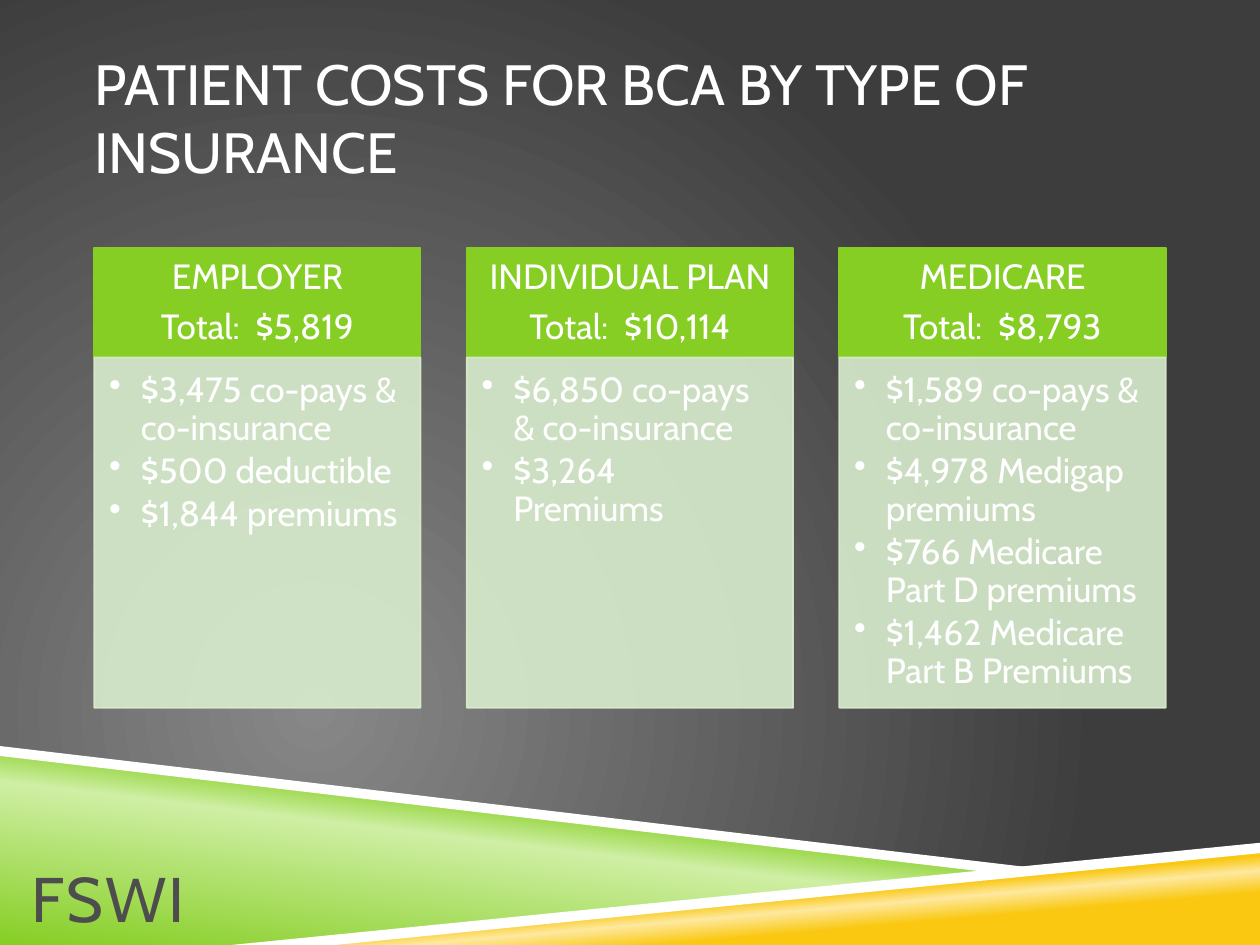
from dataclasses import dataclass

from lxml import etree
from pptx import Presentation
from pptx.dml.color import RGBColor
from pptx.enum.shapes import MSO_SHAPE
from pptx.enum.text import MSO_ANCHOR, MSO_AUTO_SIZE, PP_ALIGN
from pptx.oxml.ns import qn
from pptx.util import Cm, Pt


@dataclass(frozen=True)
class Theme:
    font: str = "Cabin"
    white: str = "FFFFFF"
    green: str = "86CE24"
    light_green: str = "CFEFA4"
    pale_green: str = "D9EDCD"
    amber: str = "FAC810"
    light_amber: str = "FDE99F"
    gray: str = "878787"
    dark: str = "3D3D3D"
    footer: str = "4D4D4D"
    title_size: float = 32.4
    text_size: float = 20
    footer_size: float = 36


T = Theme()


def set_gradient(fill, owner, stops, angle=None):
    """Fill with (percent, colour) stops: linear at an angle, else circular."""
    fill.gradient()
    grad = next(owner.iter(qn("a:gradFill")))
    for child in list(grad):
        grad.remove(child)
    gs_list = etree.SubElement(grad, qn("a:gsLst"))
    for pos, color in stops:
        gs = etree.SubElement(gs_list, qn("a:gs"), pos=str(pos * 1000))
        etree.SubElement(gs, qn("a:srgbClr"), val=color)
    if angle is not None:
        etree.SubElement(grad, qn("a:lin"), ang=str(angle * 60000), scaled="0")
    else:
        circle = etree.SubElement(grad, qn("a:path"), path="circle")
        etree.SubElement(circle, qn("a:fillToRect"),
                         l="50000", t="100000", r="100000", b="50000")


def add_run(p, text, size, color):
    r = p.add_run()
    r.text = text
    r.font.name = T.font
    r.font.size = Pt(size)
    r.font.color.rgb = RGBColor.from_string(color)
    return r


prs = Presentation()
prs.slide_width, prs.slide_height = Cm(25.4), Cm(19.05)
s = prs.slides.add_slide(prs.slide_layouts[5])
set_gradient(s.background.fill, s.element, [(0, T.gray), (100, T.dark)])

# Bands along the bottom: outline in cm, gradient stops, angle (None = plain white)
green_stops = [(0, T.green), (52, T.light_green), (66, T.green)]
amber_stops = [(28, T.amber), (40, T.light_amber), (48, T.amber)]
bands = [
    ([(0, 15.16), (20.12, 17.58), (5.08, 19.05), (0, 19.05)], green_stops, 277),
    ([(5.03, 19.05), (25.4, 17.07), (25.4, 19.05)], amber_stops, 265),
    ([(0, 15.04), (0, 15.24), (20.07, 17.6), (21.13, 17.53)], None, None),
    ([(25.4, 16.99), (4.67, 19.05), (6.76, 19.05), (25.4, 17.2)], None, None),
]
for outline, stops, angle in bands:
    points = [(Cm(x), Cm(y)) for x, y in outline]
    builder = s.shapes.build_freeform(*points[0])
    builder.add_line_segments(points[1:], close=True)
    sp = builder.convert_to_shape()
    sp.shadow.inherit = False
    sp.line.fill.background()
    if stops:
        set_gradient(sp.fill, sp.element, stops, angle)
    else:
        sp.fill.solid()
        sp.fill.fore_color.rgb = RGBColor.from_string(T.white)

# Title
title = s.shapes.title
title.left, title.top, title.width, title.height = Cm(1.9), Cm(0.76), Cm(21.59), Cm(3.18)
tf = title.text_frame
tf.word_wrap = True
tf.auto_size = MSO_AUTO_SIZE.NONE
tf.vertical_anchor = MSO_ANCHOR.MIDDLE
tf.margin_left = tf.margin_right = 0
tf.margin_top = tf.margin_bottom = Cm(0.13)
p = tf.paragraphs[0]
p.alignment = PP_ALIGN.LEFT
add_run(p, "PATIENT COSTS FOR BCA BY TYPE OF INSURANCE", T.title_size, T.white)

# One column per type of insurance: a heading block above a list block
plans = [
    (["EMPLOYER", "Total:  $5,819"],
     ["$3,475 co-pays & co-insurance", "$500 deductible", "$1,844 premiums"]),
    (["INDIVIDUAL PLAN", "Total:  $10,114"],
     ["$6,850 co-pays & co-insurance", "$3,264 Premiums"]),
    (["MEDICARE", "Total:  $8,793"],
     ["$1,589 co-pays & co-insurance", "$4,978 Medigap premiums",
      "$766 Medicare Part D premiums", "$1,462 Medicare Part B Premiums"]),
]
first_left, pitch, col_width = 1.9, 7.51, 6.58
head_top, head_height, list_height = 5, 2.21, 7.06

for i, (heading, costs) in enumerate(plans):
    left = Cm(first_left + i * pitch)
    blocks = [
        (heading, head_top, head_height, T.green, False),
        (costs, head_top + head_height, list_height, T.pale_green, True),
    ]
    for lines, top, height, color, is_list in blocks:
        sp = s.shapes.add_shape(MSO_SHAPE.RECTANGLE, left, Cm(top),
                                Cm(col_width), Cm(height))
        sp.shadow.inherit = False
        sp.fill.solid()
        sp.fill.fore_color.rgb = RGBColor.from_string(color)
        sp.line.color.rgb = RGBColor.from_string(color)
        sp.line.width = Pt(1)
        tf = sp.text_frame
        tf.word_wrap = True
        tf.margin_left = tf.margin_right = Cm(0.41)
        tf.margin_top = tf.margin_bottom = Cm(0.23)
        tf.vertical_anchor = MSO_ANCHOR.MIDDLE
        if is_list:
            tf.vertical_anchor = MSO_ANCHOR.TOP
            tf.margin_left = tf.margin_top = Cm(0.3)
            tf.margin_bottom = Cm(0.43)
            for clr in sp.element.spPr.iter(qn("a:srgbClr")):
                etree.SubElement(clr, qn("a:alpha"), val="90000")
        for n, text in enumerate(lines):
            p = tf.add_paragraph() if n else tf.paragraphs[0]
            if is_list:
                p.level = 1
                pPr = p._p.get_or_add_pPr()
                pPr.set("marL", str(Cm(0.64)))
                pPr.set("indent", str(-Cm(0.64)))
                etree.SubElement(pPr, qn("a:buChar"), char="•")
            p.alignment = PP_ALIGN.LEFT if is_list else PP_ALIGN.CENTER
            p.line_spacing = 0.9
            p.space_after = Pt(3 if is_list else 7)
            add_run(p, text, T.text_size, T.white)

# Footer
footer = s.shapes.add_textbox(Cm(0.64), Cm(17.83), Cm(8.05), Cm(1.02))
tf = footer.text_frame
tf.word_wrap = True
tf.vertical_anchor = MSO_ANCHOR.BOTTOM
tf.margin_left = tf.margin_right = tf.margin_bottom = 0
tf.margin_top = Cm(0.13)
r = add_run(tf.paragraphs[0], "FSWI", T.footer_size, T.footer)
r.font._element.set("spc", "110")

prs.save("out.pptx")
